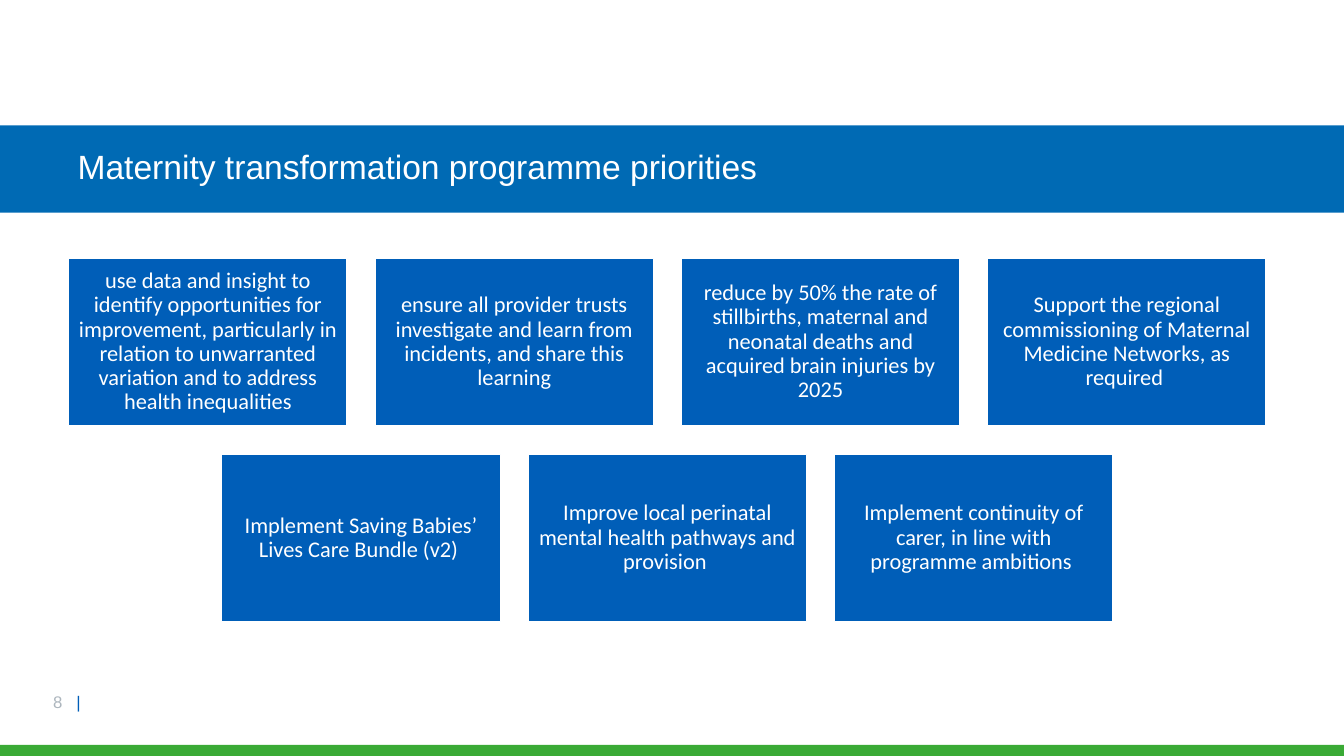
from pptx import Presentation
from pptx import util as u
from pptx.dml.color import RGBColor
from pptx.enum import shapes, text

WHITE = "FFFFFF"
CARD_BLUE = "005EB8"


def colour(hex_code):
    return RGBColor.from_string(hex_code)


def add_block(slide, left, top, width, height, fill):
    block = slide.shapes.add_shape(
        shapes.MSO_SHAPE.RECTANGLE, u.Cm(left), u.Cm(top), u.Cm(width), u.Cm(height))
    block.shadow.inherit = False
    block.fill.solid()
    block.fill.fore_color.rgb = colour(fill)
    block.line.fill.background()
    return block


deck = Presentation()
deck.slide_width, deck.slide_height = u.Cm(33.87), u.Cm(19.05)
slide = deck.slides.add_slide(deck.slide_layouts[5])

heading = slide.shapes.title
heading_band = add_block(slide, 0, 3.16, 33.87, 2.2, "006AB4")
footer_band = add_block(slide, 0, 18.77, 33.87, 0.28, "3AAA35")
for band in (heading_band, footer_band):
    heading.element.addprevious(band.element)

heading.left, heading.top = u.Cm(1.7), u.Cm(3.4)
heading.width, heading.height = u.Cm(30.23), u.Cm(1.7)
heading.text_frame.text = "Maternity transformation programme priorities"
heading.text_frame.vertical_anchor = text.MSO_ANCHOR.MIDDLE
heading_line = heading.text_frame.paragraphs[0]
heading_line.alignment = text.PP_ALIGN.LEFT
heading_line.line_spacing = 0.9
heading_font = heading_line.runs[0].font
heading_font.name, heading_font.size = "Arial", u.Pt(24)
heading_font.color.rgb = colour(WHITE)

page_number = slide.shapes.add_textbox(u.Cm(1.09), u.Cm(17.3), u.Cm(2.39), u.Cm(0.76))
page_number.text_frame.word_wrap = True
for part, shade in (("8  ", "ADB6BE"), (" |", CARD_BLUE)):
    run = page_number.text_frame.paragraphs[0].add_run()
    run.text = part
    run.font.name, run.font.size = "Arial", u.Pt(12)
    run.font.color.rgb = colour(shade)

priority_rows = [
    [
        "use data and insight to identify opportunities for improvement, "
        "particularly in relation to unwarranted variation and to address health inequalities",
        "ensure all provider trusts investigate and learn from incidents, and share this learning",
        "reduce by 50% the rate of stillbirths, maternal and neonatal deaths "
        "and acquired brain injuries by 2025",
        "Support the regional commissioning of Maternal Medicine Networks, as required ",
    ],
    [
        "Implement Saving Babies’ Lives Care Bundle (v2) ",
        "Improve local perinatal mental health pathways and provision ",
        "Implement continuity of carer, in line with programme ambitions ",
    ],
]
card_width, card_height, gap = 7.02, 4.21, 0.7
grid_centre, grid_top = 16.82, 6.51

for row, priorities in enumerate(priority_rows):
    row_width = len(priorities) * (card_width + gap) - gap
    row_left = grid_centre - row_width / 2
    for column, priority in enumerate(priorities):
        card = add_block(
            slide, row_left + column * (card_width + gap),
            grid_top + row * (card_height + gap + 0.03),
            card_width, card_height, CARD_BLUE)
        card.line.color.rgb = colour(WHITE)
        card.line.width = u.Pt(1)
        frame = card.text_frame
        frame.text = priority
        frame.word_wrap = True
        frame.vertical_anchor = text.MSO_ANCHOR.MIDDLE
        frame.margin_left = frame.margin_right = u.Cm(0.17)
        frame.margin_top = frame.margin_bottom = u.Cm(0.17)
        wording = frame.paragraphs[0]
        wording.alignment = text.PP_ALIGN.CENTER
        wording.line_spacing = 0.9
        wording_font = wording.runs[0].font
        wording_font.name, wording_font.size = "Calibri", u.Pt(16)
        wording_font.color.rgb = colour(WHITE)

deck.save("out.pptx")
